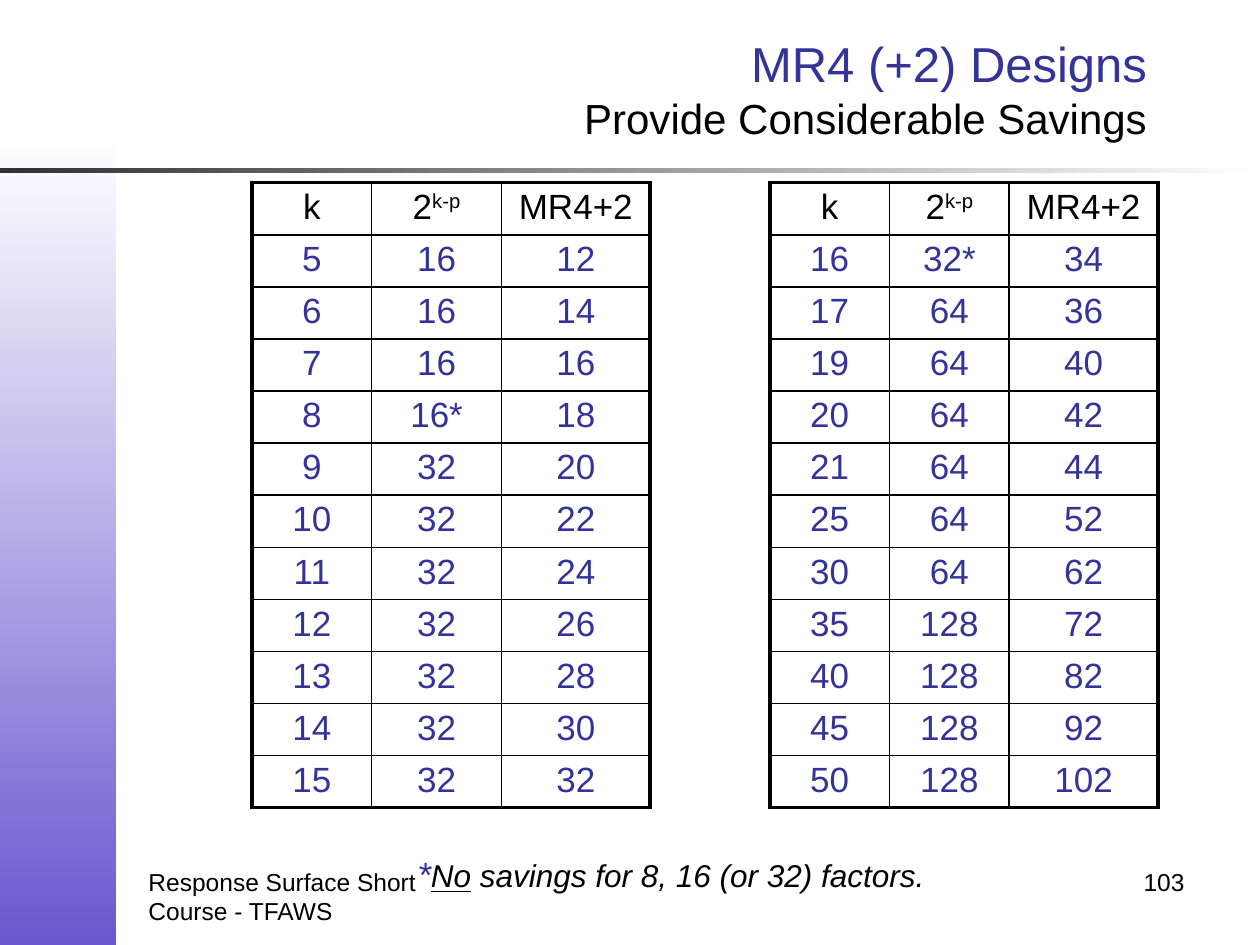
from lxml import etree
from pptx import Presentation
from pptx.dml.color import RGBColor
from pptx.enum.shapes import MSO_SHAPE
from pptx.enum.text import MSO_ANCHOR, PP_ALIGN
from pptx.oxml.ns import qn
from pptx.util import Inches, Pt

RECTANGLE = MSO_SHAPE.RECTANGLE
MIDDLE = MSO_ANCHOR.MIDDLE
LEFT, CENTER, RIGHT = PP_ALIGN.LEFT, PP_ALIGN.CENTER, PP_ALIGN.RIGHT

BLACK = RGBColor(0x00, 0x00, 0x00)
WHITE = RGBColor(0xFF, 0xFF, 0xFF)
NAVY = RGBColor(0x33, 0x33, 0x99)
VIOLET = RGBColor(0x6B, 0x57, 0xCF)
CHARCOAL = RGBColor(0x31, 0x31, 0x31)

FONT = "Arial"
THIN, THICK = 1, 2.25
NO_STYLE = "{2D5ABB26-0587-4C30-8999-92F81FD0307C}"

HEADER = ("k", "2", "MR4+2")
LEFT_DESIGNS = [
    ("5", "16", "12"), ("6", "16", "14"), ("7", "16", "16"), ("8", "16*", "18"),
    ("9", "32", "20"), ("10", "32", "22"), ("11", "32", "24"), ("12", "32", "26"),
    ("13", "32", "28"), ("14", "32", "30"), ("15", "32", "32"),
]
RIGHT_DESIGNS = [
    ("16", "32*", "34"), ("17", "64", "36"), ("19", "64", "40"), ("20", "64", "42"),
    ("21", "64", "44"), ("25", "64", "52"), ("30", "64", "62"), ("35", "128", "72"),
    ("40", "128", "82"), ("45", "128", "92"), ("50", "128", "102"),
]
COLUMN_WIDTHS = (0.95, 1.03, 1.18, 0.95, 0.95, 0.95, 1.18)
GAP_COLUMN = 3


def add_text(left, top, width, height, alignment, size):
    """Add a wrapping text box and return its text frame and first paragraph."""
    box = slide.shapes.add_textbox(Inches(left), Inches(top), Inches(width), Inches(height))
    frame = box.text_frame
    frame.word_wrap = True
    paragraph = frame.paragraphs[0]
    paragraph.alignment = alignment
    paragraph.font.name = FONT
    paragraph.font.size = Pt(size)
    paragraph.font.color.rgb = BLACK
    return frame, paragraph


def set_borders(cell, widths):
    """Give the cell black borders; widths maps a side (L, R, T, B) to points."""
    properties = cell._tc.get_or_add_tcPr()
    for position, (side, width) in enumerate(widths.items()):
        line = etree.Element(qn("a:ln" + side), w=str(Pt(width)))
        fill = etree.SubElement(line, qn("a:solidFill"))
        etree.SubElement(fill, qn("a:srgbClr"), val=str(BLACK))
        properties.insert(position, line)


presentation = Presentation()
presentation.slide_width = Inches(10)
presentation.slide_height = Inches(7.5)
slide = presentation.slides.add_slide(presentation.slide_layouts[6])

# Side band and rule under the title
for left, top, width, height, angle, start, end in [
    (0, 1.08, 0.92, 6.42, 270, WHITE, VIOLET),
    (0, 1.33, 10, 0.04, 0, CHARCOAL, WHITE),
]:
    band = slide.shapes.add_shape(
        RECTANGLE, Inches(left), Inches(top), Inches(width), Inches(height))
    band.shadow.inherit = False
    band.line.fill.background()
    band.fill.gradient()
    band.fill.gradient_angle = angle
    for stop, color in zip(band.fill.gradient_stops, (start, end)):
        stop.color.rgb = color

# Footer
for left, alignment, text in [
    (1.08, LEFT, "Response Surface Short Course - TFAWS"),
    (7.17, RIGHT, "103"),
]:
    frame, paragraph = add_text(left, 6.83, 2.33, 0.52, alignment, 14)
    paragraph.add_run().text = text

# Title
frame, paragraph = add_text(2, 0.1, 7.2, 1.2, RIGHT, 24)
frame.vertical_anchor = MIDDLE
heading = paragraph.add_run()
heading.text = "MR4 (+2) Designs"
heading.font.size = Pt(28)
heading.font.color.rgb = NAVY
paragraph.add_line_break()
paragraph.add_run().text = "Provide Considerable Savings"

# Two blocks of designs in one table, with an empty column between them
rows = [HEADER + ("",) + HEADER]
rows += [left + ("",) + right for left, right in zip(LEFT_DESIGNS, RIGHT_DESIGNS)]
table_frame = slide.shapes.add_table(
    len(rows), len(COLUMN_WIDTHS), Inches(2), Inches(1.45), Inches(7.2), Inches(4.96))
table = table_frame.table
table.first_row = False
table.horz_banding = False
table._tbl.tblPr.find(qn("a:tableStyleId")).text = NO_STYLE
for column, width in zip(table.columns, COLUMN_WIDTHS):
    column.width = Inches(width)

for row_index, values in enumerate(rows):
    table.rows[row_index].height = Inches(0.37)
    is_header = row_index == 0
    is_last = row_index == len(rows) - 1
    for column_index, value in enumerate(values):
        cell = table.cell(row_index, column_index)
        cell.fill.background()
        cell.margin_left = cell.margin_right = Inches(0.1)
        cell.margin_top = cell.margin_bottom = Inches(0.04)
        paragraph = cell.text_frame.paragraphs[0]
        paragraph.alignment = CENTER
        paragraph.font.name = FONT
        paragraph.font.size = Pt(20)
        paragraph.font.color.rgb = BLACK if is_header else NAVY
        if column_index == GAP_COLUMN:
            set_borders(cell, {"L": THICK, "R": THICK})
            continue
        paragraph.add_run().text = value
        block_column = column_index % (GAP_COLUMN + 1)
        if is_header and block_column == 1:
            exponent = paragraph.add_run()
            exponent.text = "k-p"
            exponent._r.get_or_add_rPr().set("baseline", "30000")
        set_borders(cell, {
            "L": THICK if block_column == 0 else THIN,
            "R": THICK if block_column == 2 else THIN,
            "T": THICK if is_header else THIN,
            "B": THICK if is_last else THIN,
        })

# Footnote
frame, paragraph = add_text(2.03, 6.72, 6.59, 0.43, CENTER, 18)
paragraph.font.italic = True
asterisk = paragraph.add_run()
asterisk.text = "*"
asterisk.font.size = Pt(20)
asterisk.font.color.rgb = NAVY
emphasis = paragraph.add_run()
emphasis.text = "No"
emphasis.font.underline = True
paragraph.add_run().text = " savings for 8, 16 (or 32) factors."

presentation.save("out.pptx")
